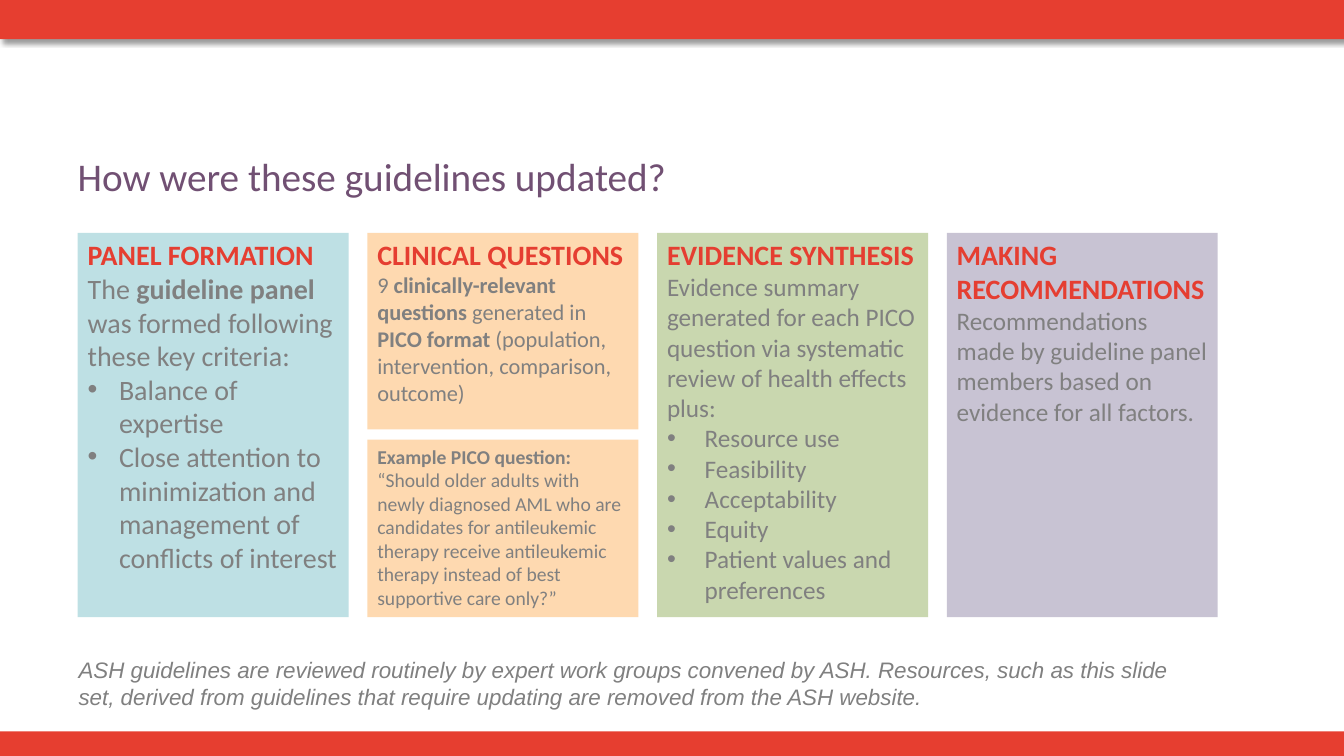
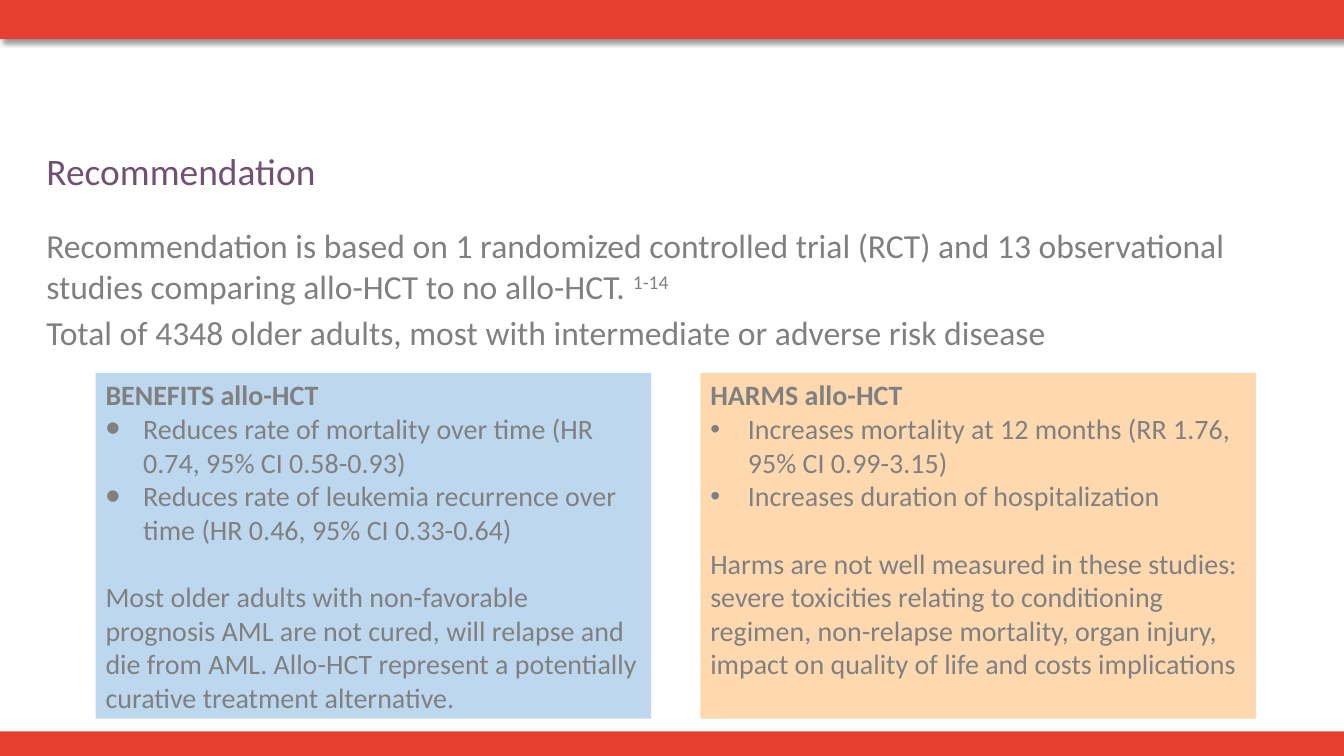
from lxml import etree
from pptx import Presentation
from pptx.dml.color import RGBColor
from pptx.enum.shapes import MSO_SHAPE
from pptx.enum.text import MSO_ANCHOR, PP_ALIGN
from pptx.oxml.ns import qn
from pptx.util import Cm, Pt

RECT = MSO_SHAPE.RECTANGLE
TOP = MSO_ANCHOR.TOP
LEFT = PP_ALIGN.LEFT

RED = RGBColor(0xE6, 0x3E, 0x30)
HEADING_RED = RGBColor(0xE5, 0x3E, 0x31)
PURPLE = RGBColor(0x71, 0x50, 0x73)
GRAY = RGBColor(0x80, 0x80, 0x80)
TEAL = RGBColor(0xBE, 0xE0, 0xE4)
PEACH = RGBColor(0xFE, 0xD9, 0xB0)
GREEN = RGBColor(0xC9, 0xD7, 0xAF)
MAUVE = RGBColor(0x8B, 0x80, 0xA3)
BLUE = RGBColor(0xBD, 0xD7, 0xEE)

FONT = "Calibri"
SLIDE_W, SLIDE_H = 33.87, 19.05


def add_rect(slide, x, y, w, h, color, alpha=None):
    sp = slide.shapes.add_shape(RECT, Cm(x), Cm(y), Cm(w), Cm(h))
    sp.shadow.inherit = False
    sp.fill.solid()
    sp.fill.fore_color.rgb = color
    sp.line.fill.background()
    if alpha is not None:
        clr = sp._element.spPr.find(qn("a:solidFill"))[0]
        etree.SubElement(clr, qn("a:alpha"), val=str(alpha * 1000))
    return sp


def add_shadow(sp):
    effects = sp._element.spPr.find(qn("a:effectLst"))
    shadow = etree.SubElement(
        effects, qn("a:outerShdw"), blurRad=str(Pt(4)), dist=str(Pt(3)),
        dir=str(45 * 60000), algn="tl", rotWithShape="0")
    clr = etree.SubElement(shadow, qn("a:srgbClr"), val="000000")
    etree.SubElement(clr, qn("a:alpha"), val="40000")


def add_bullet(p, indent, percent):
    pPr = p._p.get_or_add_pPr()
    pPr.set("marL", str(Cm(indent)))
    pPr.set("indent", str(-Cm(indent)))
    etree.SubElement(pPr, qn("a:buSzPct"), val=str(percent * 1000))
    etree.SubElement(pPr, qn("a:buFont"), typeface="Arial")
    etree.SubElement(pPr, qn("a:buChar"), char="•")


def add_run(p, text, size, color=GRAY, bold=False, italic=False, font=FONT):
    r = p.add_run()
    r.text = text
    r.font.name = font
    r.font.size = Pt(size)
    r.font.color.rgb = color
    r.font.bold = bold
    r.font.italic = italic
    return r


def next_paragraph(tf, before=0):
    p = tf.paragraphs[0]
    if p.runs:
        p = tf.add_paragraph()
    p.alignment = LEFT
    p.space_before = Pt(before)
    return p


def add_text(tf, runs, size, before=0):
    p = next_paragraph(tf, before)
    for text, bold in runs:
        add_run(p, text, size, bold=bold)


def add_bullets(tf, items, size, indent=0.95, percent=100):
    for item in items:
        p = next_paragraph(tf)
        add_bullet(p, indent, percent)
        add_run(p, item, size)


def add_card(slide, x, y, w, h, color, heading, size=20,
             heading_color=HEADING_RED, alpha=None):
    tf = add_rect(slide, x, y, w, h, color, alpha).text_frame
    tf.word_wrap = True
    tf.vertical_anchor = TOP
    add_run(next_paragraph(tf), heading, size, heading_color, bold=True)
    return tf


def add_box(slide, x, y, w, h, inset=True):
    tf = slide.shapes.add_textbox(Cm(x), Cm(y), Cm(w), Cm(h)).text_frame
    tf.word_wrap = True
    tf.vertical_anchor = TOP
    if not inset:
        tf.margin_left = tf.margin_right = 0
        tf.margin_top = tf.margin_bottom = 0
    return tf


def add_slide(prs, title, x, y, size):
    slide = prs.slides.add_slide(prs.slide_layouts[6])
    add_rect(slide, 0, 18.43, SLIDE_W, 0.62, RED)
    add_shadow(add_rect(slide, 0, -0.02, SLIDE_W, 1.01, RED))
    tf = add_box(slide, x, y, 30.48, 1.18, inset=False)
    add_run(next_paragraph(tf), title, size, PURPLE)
    return slide


def build_update_slide(prs):
    slide = add_slide(prs, "How were these guidelines updated?", 1.96, 3.84, 28)
    top, width, height = 5.87, 6.83, 9.68
    columns = [1.96 + 7.3 * i for i in range(4)]
    example_h = 4.47

    tf = add_card(slide, columns[0], top, width, height, TEAL, "PANEL FORMATION")
    add_text(tf, [("The", False), (" guideline panel", True),
                  (" was formed following these key criteria:", False)], 20)
    add_bullets(tf, ["Balance of expertise",
                     "Close attention to minimization and management of "
                     "conflicts of interest"], 20, indent=0.79)

    tf = add_card(slide, columns[1], top, width, 4.95, PEACH, "CLINICAL QUESTIONS")
    add_text(tf, [("9 ", False), ("clinically-relevant questions ", True),
                  ("generated in ", False), ("PICO format", True),
                  (" (population, intervention, comparison, outcome)", False)], 16)

    tf = add_card(slide, columns[1], top + height - example_h, width, example_h,
                  PEACH, "Example PICO question:", 14, GRAY)
    add_text(tf, [("“Should older adults with newly diagnosed AML who are "
                   "candidates for antileukemic therapy receive antileukemic "
                   "therapy instead of best supportive care only?”", False)], 14)

    tf = add_card(slide, columns[2], top, width, height, GREEN, "EVIDENCE SYNTHESIS")
    add_text(tf, [("Evidence summary generated for each PICO question via "
                   "systematic review of health effects plus:", False)], 18)
    add_bullets(tf, ["Resource use", "Feasibility", "Acceptability", "Equity",
                     "Patient values and preferences"], 18)

    tf = add_card(slide, columns[3], top, width, height, MAUVE,
                  "MAKING RECOMMENDATIONS", alpha=47)
    add_text(tf, [("Recommendations made by guideline panel members based on "
                   "evidence for all factors.", False)], 18)

    tf = add_box(slide, 1.73, 16.41, 28.7, 1.63)
    add_run(next_paragraph(tf),
            "ASH guidelines are reviewed routinely by expert work groups "
            "convened by ASH. Resources, such as this slide set, derived from "
            "guidelines that require updating are removed from the ASH website.",
            16, italic=True, font="Arial")


def build_recommendation_slide(prs):
    slide = add_slide(prs, "Recommendation", 1.17, 3.73, 26.7)
    tf = add_box(slide, 1.17, 5.68, 30.48, 3.5, inset=False)
    p = next_paragraph(tf)
    add_run(p, "Recommendation is based on 1 randomized controlled trial (RCT) "
               "and 13 observational studies comparing allo-HCT to no allo-HCT. ", 24)
    citation = add_run(p, "1-14", 24)
    citation._r.get_or_add_rPr().set("baseline", "30000")
    add_text(tf, [("Total of 4348 older adults, most with intermediate or "
                   "adverse risk disease", False)], 24, before=4)

    cards = [
        (BLUE, "BENEFITS allo-HCT", 150,
         ["Reduces rate of mortality over time (HR 0.74, 95% CI 0.58-0.93)",
          "Reduces rate of leukemia recurrence over time (HR 0.46, 95% CI 0.33-0.64)"],
         "Most older adults with non-favorable prognosis AML are not cured, will "
         "relapse and die from AML. Allo-HCT represent a potentially curative "
         "treatment alternative."),
        (PEACH, "HARMS allo-HCT", 100,
         ["Increases mortality at 12 months (RR 1.76, 95% CI 0.99-3.15)",
          "Increases duration of hospitalization"],
         "Harms are not well measured in these studies: severe toxicities relating "
         "to conditioning regimen, non-relapse mortality, organ injury, impact on "
         "quality of life and costs implications"),
    ]
    for i, (color, heading, percent, items, closing) in enumerate(cards):
        tf = add_card(slide, 2.41 + 15.24 * i, 9.4, 14, 8.71, color, heading,
                      heading_color=GRAY)
        add_bullets(tf, items, 20, percent=percent)
        add_text(tf, [(closing, False)], 20, before=24)


def main():
    prs = Presentation()
    prs.slide_width = Cm(SLIDE_W)
    prs.slide_height = Cm(SLIDE_H)
    build_update_slide(prs)
    build_recommendation_slide(prs)
    prs.save("out.pptx")


if __name__ == "__main__":
    main()
